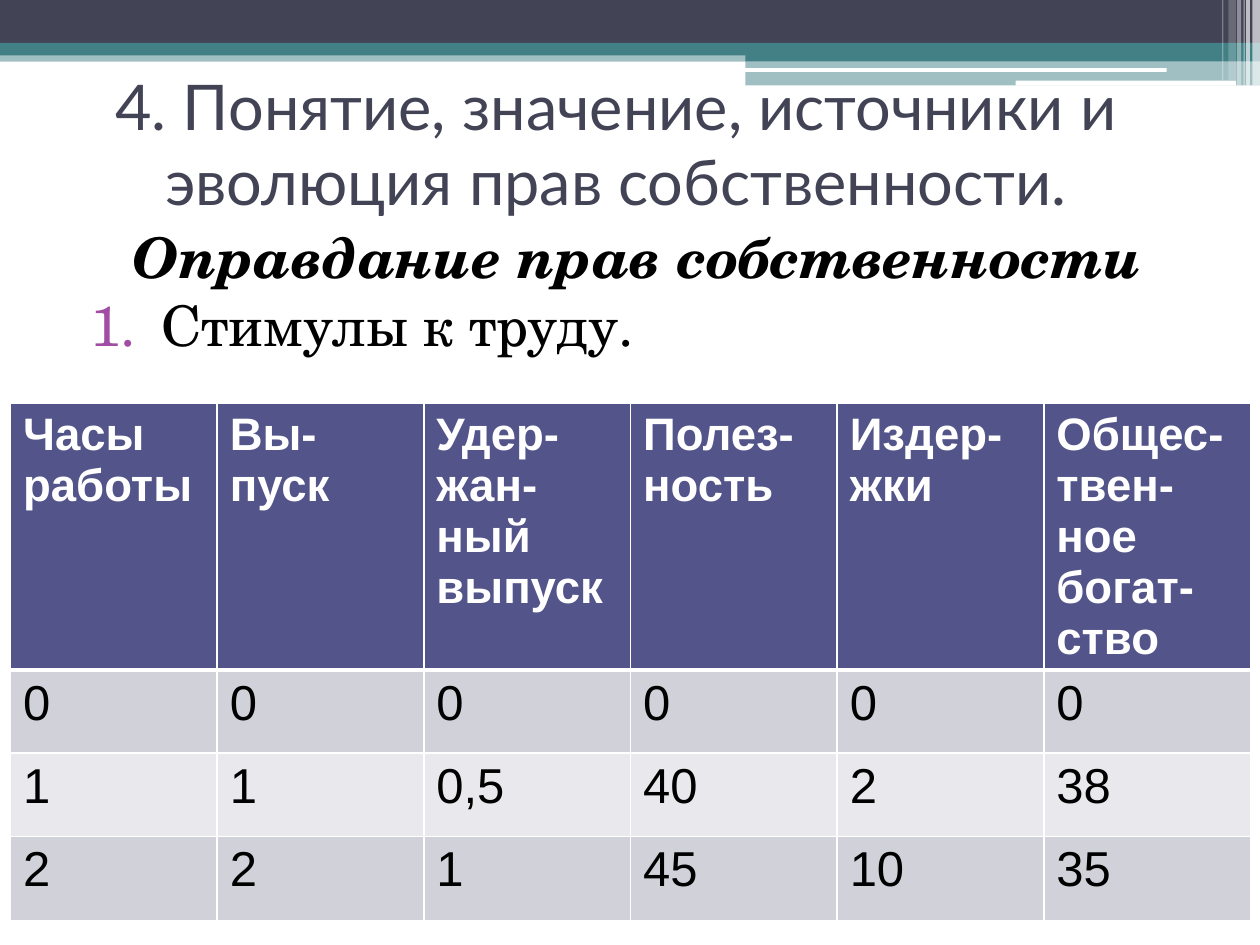
import pptx
import pptx.util
import pptx.dml.color
import pptx.enum.shapes
import pptx.enum.text
import pptx.oxml
import pptx.oxml.ns
import lxml.etree

Pt = pptx.util.Pt
qn = pptx.oxml.ns.qn
Kind = pptx.enum.shapes.MSO_SHAPE
Align = pptx.enum.text.PP_ALIGN
Anchor = pptx.enum.text.MSO_ANCHOR

HUES = {
    "dark": "424456", "teal": "438086", "white": "FFFFFF", "black": "000000",
    "mark": "A04DA3", "head": "53548A", "odd": "D1D1DA", "even": "E9E9ED",
}
FONTS = {"title": "Lato", "body": "TeX Gyre Schola", "table": "Arial"}

# left, top, width, height, colour, opacity in percent
BANDS = [
    (0, 28.8, 720, 6.5, "teal", 50),
    (0, 0, 720, 24.5, "dark", 100),
    (0, 24.5, 720, 7.2, "teal", 100),
    (426, 28, 294, 6.8, "teal", 100),
    (426, 34.6, 294, 14.2, "teal", 50),
]
BARS = [(425.5, 38.9, 241.2, 2.2), (580.3, 46.1, 126, 2.9)]
# left, width, height, opacity in percent
STRIPES = [
    (715.7, 4.3, 49, 65), (712.1, 2.2, 49, 65), (710.6, 0.7, 49, 60),
    (707, 2.2, 49, 40), (702, 4.3, 46, 20), (698.4, 0.7, 46, 30),
]
ROWS = [
    ["Часы работы", "Вы-пуск", "Удер-жан-ный выпуск", "Полез-ность",
     "Издер-жки", "Общес-твен-ное богат-ство"],
    ["0", "0", "0", "0", "0", "0"],
    ["1", "1", "0,5", "40", "2", "38"],
    ["2", "2", "1", "45", "10", "35"],
]


def tint(hue):
    return pptx.dml.color.RGBColor.from_string(HUES[hue])


class Deck:
    def __init__(self, wide, high):
        self.show = pptx.Presentation()
        self.show.slide_width, self.show.slide_height = Pt(wide), Pt(high)
        self.slide = self.show.slides.add_slide(self.show.slide_layouts[1])

    def bar(self, left, top, wide, high, hue, clear=100, kind=Kind.RECTANGLE):
        shape = self.slide.shapes.add_shape(
            kind, Pt(left), Pt(top), Pt(wide), Pt(high))
        shape.shadow.inherit = False
        shape.line.fill.background()
        shape.fill.solid()
        shape.fill.fore_color.rgb = tint(hue)
        if clear < 100:
            color = shape.element.spPr.find(".//" + qn("a:srgbClr"))
            lxml.etree.SubElement(color, qn("a:alpha"), val=str(clear * 1000))

    def place(self, index, left, top, wide, high, anchor):
        """Move a placeholder to the front and return its text frame."""
        shape = self.slide.placeholders[index]
        shape.left, shape.top = Pt(left), Pt(top)
        shape.width, shape.height = Pt(wide), Pt(high)
        shape.element.getparent().append(shape.element)
        frame = shape.text_frame
        frame.word_wrap = True
        frame.auto_size = pptx.enum.text.MSO_AUTO_SIZE.NONE
        frame.vertical_anchor = anchor
        return frame

    def text(self, para, words, font, size, hue, bold=False, slant=False):
        run = para.add_run()
        run.text = words
        run.font.name, run.font.size = FONTS[font], Pt(size)
        run.font.bold, run.font.italic = bold, slant
        run.font.color.rgb = tint(hue)

    def bullet(self, para, left, hang, number=False):
        props = para._p.get_or_add_pPr()
        props.set("marL", str(Pt(left)))
        props.set("indent", str(Pt(-hang)))
        if not number:
            lxml.etree.SubElement(props, qn("a:buNone"))
            return
        color = lxml.etree.SubElement(props, qn("a:buClr"))
        lxml.etree.SubElement(color, qn("a:srgbClr"), val=HUES["mark"])
        lxml.etree.SubElement(props, qn("a:buFont"), typeface=FONTS["body"])
        lxml.etree.SubElement(props, qn("a:buAutoNum"), type="arabicPeriod")

    def edge(self, cell, top, bottom):
        """Draw white cell borders; top and bottom are line widths."""
        props = cell._tc.get_or_add_tcPr()
        sides = {"lnL": 1, "lnR": 1, "lnT": top, "lnB": bottom}
        for spot, (side, width) in enumerate(sides.items()):
            line = lxml.etree.Element(qn("a:" + side), w=str(Pt(width)))
            fill = lxml.etree.SubElement(line, qn("a:solidFill"))
            lxml.etree.SubElement(fill, qn("a:srgbClr"), val=HUES["white"])
            props.insert(spot, line)

    def table(self, left, top, wide, highs, rows):
        grid = self.slide.shapes.add_table(
            len(rows), len(rows[0]), Pt(left), Pt(top), Pt(wide),
            Pt(sum(highs))).table
        for col in grid.columns:
            col.width = Pt(wide / len(rows[0]))
        for i, texts in enumerate(rows):
            grid.rows[i].height = Pt(highs[i])
            head = i == 0
            fill = "head" if head else "odd" if i % 2 else "even"
            for j, words in enumerate(texts):
                cell = grid.cell(i, j)
                cell.fill.solid()
                cell.fill.fore_color.rgb = tint(fill)
                self.edge(cell, 3 if i == 1 else 1, 3 if head else 1)
                self.text(cell.text_frame.paragraphs[0], words, "table",
                          26 if head else 28, "white" if head else "black",
                          bold=head)


def main():
    deck = Deck(720, 540)
    for band in BANDS:
        deck.bar(*band)
    for bar in BARS:
        deck.bar(*bar, "white", kind=Kind.ROUNDED_RECTANGLE)
    for left, wide, high, clear in STRIPES:
        deck.bar(left, 0, wide, high, "white", clear)

    body = deck.place(1, 36, 123.8, 648, 393.8, Anchor.TOP)
    lead = body.paragraphs[0]
    lead.alignment, lead.space_before = Align.CENTER, Pt(12)
    deck.bullet(lead, 28.8, 20.2)
    deck.text(lead, "Оправдание прав собственности", "body", 32, "black",
              bold=True, slant=True)
    item = body.add_paragraph()
    item.alignment, item.space_before = Align.LEFT, Pt(0)
    deck.bullet(item, 49, 40.3, number=True)
    deck.text(item, "Стимулы к труду.", "body", 32, "black")

    title = deck.place(0, 28, 39.6, 648, 84.2, Anchor.MIDDLE).paragraphs[0]
    title.alignment = Align.CENTER
    deck.text(title, "4. Понятие, значение, источники и эволюция прав "
              "собственности.", "title", 36, "dark")

    deck.table(6, 230.4, 708.6, [67.7, 47.5, 47.5, 48.2], ROWS)
    deck.show.save("out.pptx")


if __name__ == "__main__":
    main()
